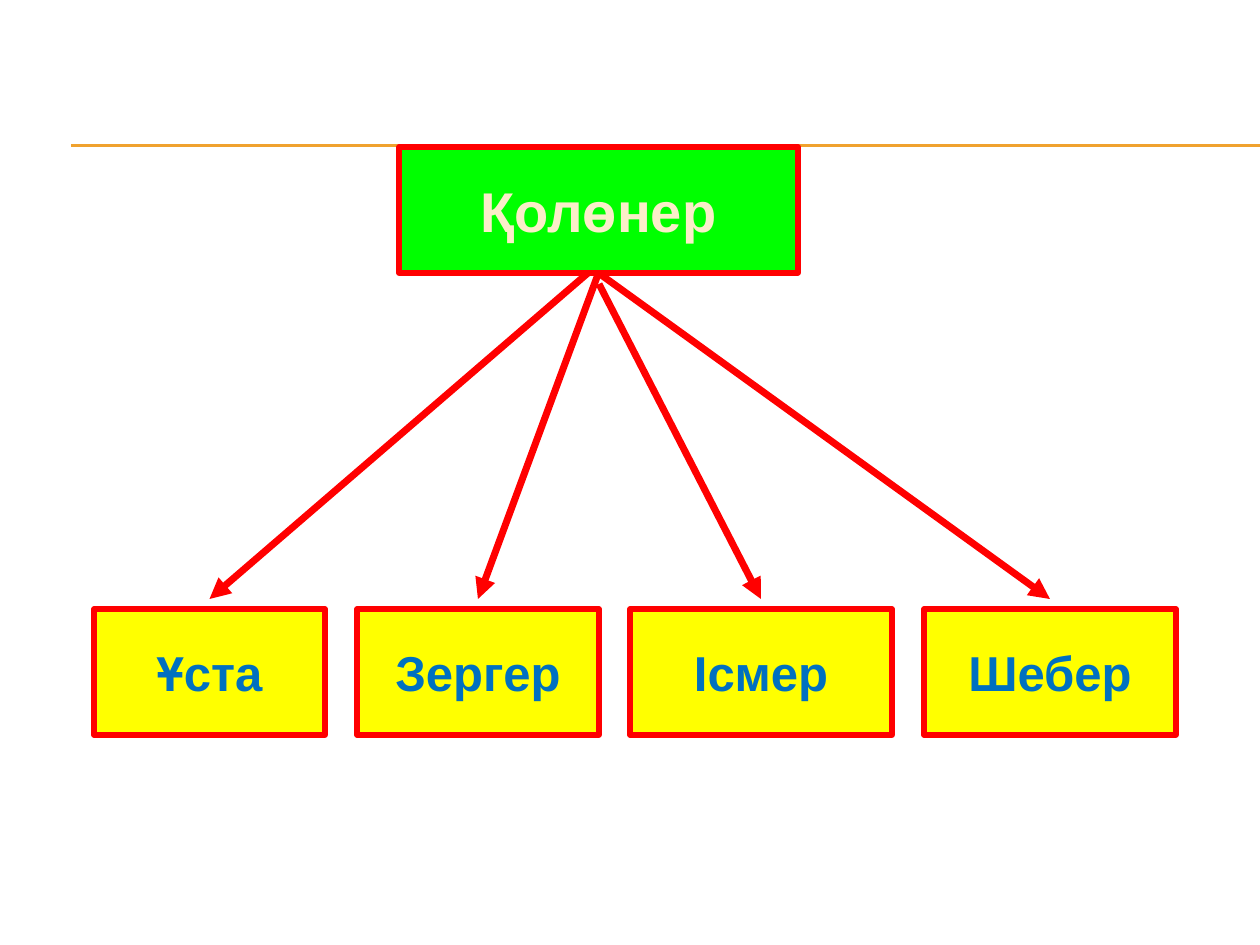
from lxml import etree
from pptx import Presentation
from pptx import util as u
from pptx.dml.color import RGBColor
from pptx.enum import shapes, text
from pptx.oxml.ns import qn

PX = 914400 / 126
RED, GOLD = "FF0000", "F0A22E"
RULE_LEFT, RULE_RIGHT, RULE_TOPS = 71, 1260, (145, 146)
ROOT = ("Қолөнер", 399, 399)
ROOT_TOP, LEAF_TOP, BOX_HEIGHT = 147, 609, 126
LEAVES = [("Ұста", 94, 231), ("Зергер", 357, 242), ("Ісмер", 630, 262), ("Шебер", 924, 252)]
ROOT_MIDDLE = (599, ROOT_TOP + BOX_HEIGHT)
ARROW_STARTS = [(588, 273), ROOT_MIDDLE, (599, 284), ROOT_MIDDLE]
ARROW_GAP = 10


def px(value):
    return u.Emu(round(value * PX))


def color(value):
    return RGBColor.from_string(value)


def write(shape, content, size, fill):
    frame = shape.text_frame
    frame.word_wrap = False
    frame.vertical_anchor = text.MSO_ANCHOR.MIDDLE
    paragraph = frame.paragraphs[0]
    paragraph.alignment = text.PP_ALIGN.CENTER
    run = paragraph.add_run()
    run.text = content
    run.font.name, run.font.size, run.font.bold = "Arial", u.Pt(size), True
    run.font.color.rgb = color(fill)


def add_box(slide, box, top, fill, size, text_color):
    content, left, width = box
    shape = slide.shapes.add_shape(
        shapes.MSO_SHAPE.RECTANGLE, px(left), px(top), px(width), px(BOX_HEIGHT))
    shape.shadow.inherit = False
    shape.fill.solid()
    shape.fill.fore_color.rgb = color(fill)
    shape.line.color.rgb = color(RED)
    shape.line.width = u.Pt(3)
    write(shape, content, size=size, fill=text_color)
    return shape


def add_line(slide, start, end, stroke, width, arrow=False):
    line = slide.shapes.add_connector(
        shapes.MSO_CONNECTOR.STRAIGHT, *(px(value) for value in (*start, *end)))
    line.line.color.rgb = color(stroke)
    line.line.width = u.Pt(width)
    if arrow:
        etree.SubElement(line.line._get_or_add_ln(), qn("a:tailEnd"), type="triangle")
    etree.SubElement(line._element.spPr, qn("a:effectLst"))
    return line


def main():
    """Build the craft diagram: one root box with arrows to four leaf boxes."""
    presentation = Presentation()
    presentation.slide_width, presentation.slide_height = u.Inches(10), u.Inches(7.5)
    slide = presentation.slides.add_slide(presentation.slide_layouts[6])
    for top in RULE_TOPS:
        add_line(slide, (RULE_LEFT, top), (RULE_RIGHT, top), GOLD, 0.75)
    root = add_box(slide, ROOT, ROOT_TOP, "00FF00", 32, "FBEEC9")
    for leaf in LEAVES:
        add_box(slide, leaf, LEAF_TOP, "FFFF00", 28, "0070C0")
    for (_, left, width), start in zip(LEAVES, ARROW_STARTS):
        tip = (left + width / 2, LEAF_TOP - ARROW_GAP)
        arrow = add_line(slide, start, tip, RED, 4, arrow=True)
        if start == ROOT_MIDDLE:
            arrow.begin_connect(root, 2)
    presentation.save("out.pptx")


if __name__ == "__main__":
    main()
